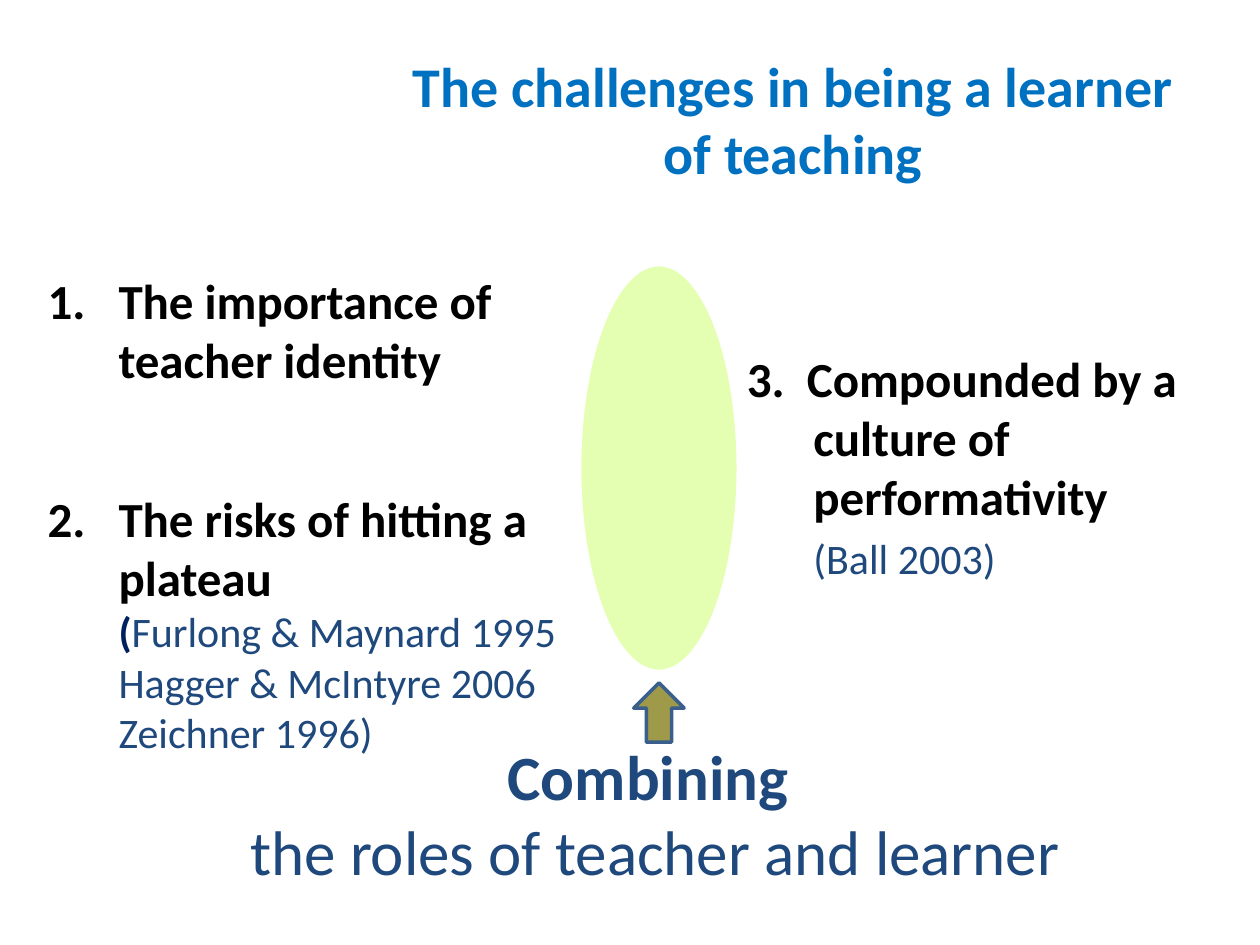
import pptx
import pptx.util
import pptx.dml.color
import pptx.enum.shapes
import pptx.enum.text
import pptx.oxml
import pptx.oxml.ns

Pt = pptx.util.Pt
RGB = pptx.dml.color.RGBColor.from_string
SHAPE = pptx.enum.shapes.MSO_SHAPE

THEME = {
    "font": "Calibri",
    "title": {"size": 32, "color": "0070C0", "bold": True},
    "point": {"size": 28, "color": "000000", "bold": True},
    "mark": {"size": 24, "color": "002060", "bold": True},
    "cite": {"size": 24, "color": "1F497D", "bold": False},
    "lead": {"size": 36, "color": "1F497D", "bold": True},
    "role": {"size": 36, "color": "1F497D", "bold": False},
    "oval": "CCFF66",
    "rim": "FFFFFF",
    "arrow": "9E9A4A",
    "edge": "3A5F8C",
}

# Each paragraph is a list of (text, style) runs; "\n" is a line break.
TITLE = [[("The challenges in being a learner of teaching", "title")]]
RISKS = [
    [("The importance of teacher identity", "point")],
    [("The risks of hitting a plateau\n", "point"), ("(", "mark"),
     ("Furlong & Maynard 1995\nHagger & McIntyre 2006\nZeichner 1996)", "cite")],
]
CULTURE = [
    [("3.  Compounded by a culture of performativity", "point")],
    [("(Ball 2003)", "cite")],
]
ROLES = [
    [("Combining ", "lead")],
    [("the roles of teacher and learner", "role")],
]

AXIS = 376.56  # shared centre line of the oval and the arrow


def add_text(slide, box, paras, center=False, hang=0, number=False, gap=0):
    """Add a text box; hang is the indent, gap the space between paragraphs."""
    frame = slide.shapes.add_textbox(*map(Pt, box)).text_frame
    frame.word_wrap = True
    for i, runs in enumerate(paras):
        para = frame.paragraphs[0] if i == 0 else frame.add_paragraph()
        if center:
            para.alignment = pptx.enum.text.PP_ALIGN.CENTER
        if i:
            para.space_before = Pt(gap)
        props = para._p.get_or_add_pPr()
        if hang:
            props.set("marL", str(Pt(hang)))
            props.set("indent", str(-Pt(hang) if number or i == 0 else 0))
        if number:
            font = pptx.oxml.ns.qn("a:buFont")
            props.append(props.makeelement(font, {"typeface": "+mj-lt"}))
            auto = pptx.oxml.ns.qn("a:buAutoNum")
            props.append(props.makeelement(auto, {"type": "arabicPeriod"}))
        for text, style in runs:
            add_run(para, text, **THEME[style])


def add_run(para, text, size, color, bold):
    for i, line in enumerate(text.split("\n")):
        if i:
            para.add_line_break()
        if line:
            run = para.add_run()
            run.text = line
            run.font.name = THEME["font"]
            run.font.size = Pt(size)
            run.font.bold = bold
            run.font.color.rgb = RGB(color)


def add_form(slide, kind, top, width, height, fill, line, alpha=None):
    """Add a preset shape centred on the axis; alpha is opacity in percent."""
    box = (AXIS - width / 2, top, width, height)
    shape = slide.shapes.add_shape(kind, *map(Pt, box))
    shape.shadow.inherit = False
    shape.fill.solid()
    shape.fill.fore_color.rgb = RGB(fill)
    shape.line.color.rgb = RGB(line)
    shape.line.width = Pt(2)
    if alpha is not None:
        tint = shape.fill._xPr.find(".//" + pptx.oxml.ns.qn("a:srgbClr"))
        name = pptx.oxml.ns.qn("a:alpha")
        tint.append(tint.makeelement(name, {"val": str(alpha * 1000)}))


def main():
    deck = pptx.Presentation()
    deck.slide_width, deck.slide_height = Pt(720), Pt(540)
    slide = deck.slides.add_slide(deck.slide_layouts[6])

    add_text(slide, (59.76, 417.6, 629.28, 94.32), ROLES, center=True)
    add_form(slide, SHAPE.OVAL, 151.2, 90.72, 232.56,
             THEME["oval"], THEME["rim"], alpha=50)
    add_form(slide, SHAPE.UP_ARROW, 390.24, 28.8, 33.84,
             THEME["arrow"], THEME["edge"])
    add_text(slide, (20.16, 151.2, 311.76, 416.88), RISKS,
             hang=40.5, number=True, gap=57)
    add_text(slide, (419.76, 195.84, 311.76, 143.28), CULTURE, hang=38, gap=4)
    add_text(slide, (212.4, 25.92, 481.68, 84.96), TITLE, center=True)

    deck.save("out.pptx")


if __name__ == "__main__":
    main()
